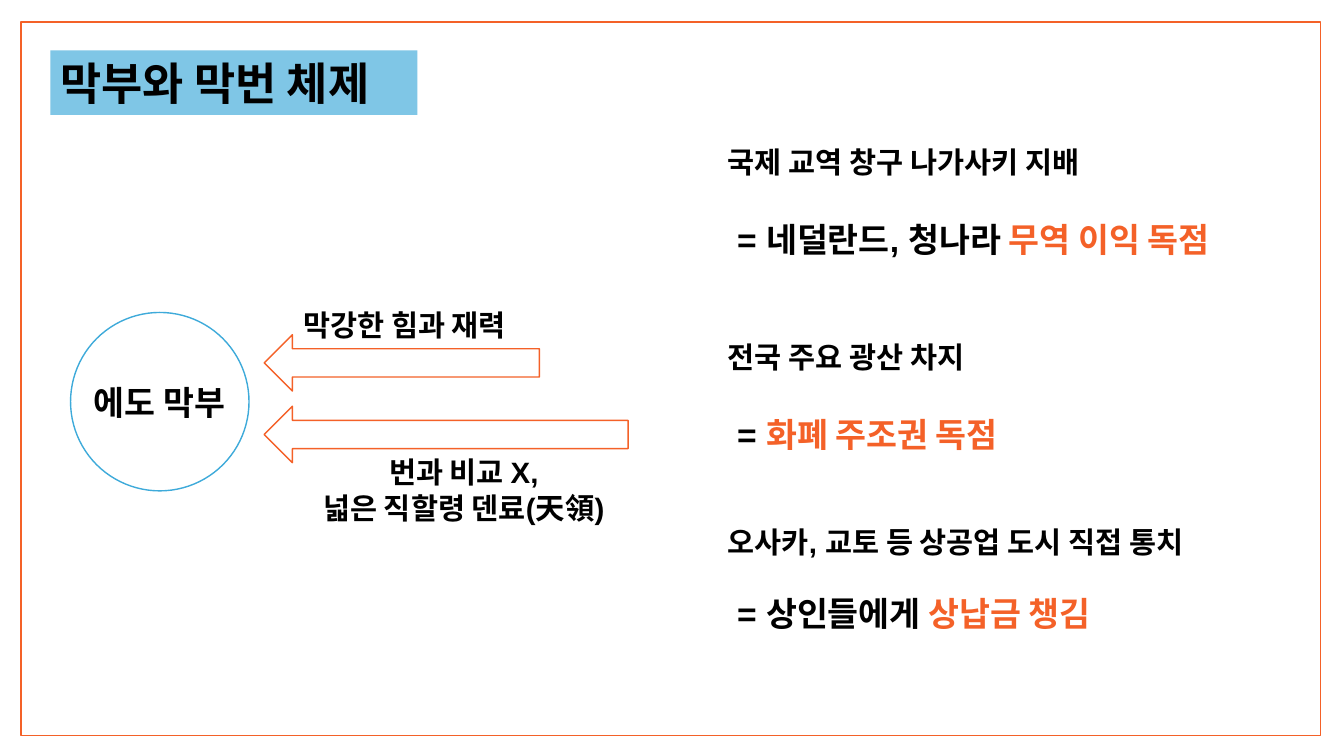
from pptx import Presentation
from pptx.dml.color import RGBColor
from pptx.enum.shapes import MSO_SHAPE
from pptx.enum.text import MSO_ANCHOR, PP_ALIGN
from pptx.util import Inches, Pt

RECTANGLE = MSO_SHAPE.RECTANGLE
OVAL = MSO_SHAPE.OVAL
ARROW = MSO_SHAPE.RIGHT_ARROW
LEFT, CENTER = PP_ALIGN.LEFT, PP_ALIGN.CENTER
TOP = MSO_ANCHOR.TOP

BLACK, WHITE = "000000", "FFFFFF"
ORANGE, BLUE, SKY = "F46128", "3EAADA", "7FC6E6"
LATIN_FONT, KOREAN_FONT = "Arial", "Noto Sans CJK KR"

ADVANTAGES = [
    # top, height, gap in points, heading, plain result, highlighted result
    (1.38, 1.26, 28, "국제 교역 창구 나가사키 지배", " = 네덜란드, 청나라 ", "무역 이익 독점"),
    (3.32, 1.26, 28, "전국 주요 광산 차지", " = ", "화폐 주조권 독점"),
    (5.15, 1.21, 24, "오사카, 교토 등 상공업 도시 직접 통치", " = 상인들에게", " 상납금 챙김"),
]


def rgb(hex_color):
    return RGBColor.from_string(hex_color)


def add_outline(slide, kind, box, fill=None, line=None, rotation=0):
    shape = slide.shapes.add_shape(kind, *map(Inches, box))
    shape.shadow.inherit = False
    shape.rotation = rotation
    if fill:
        shape.fill.solid()
        shape.fill.fore_color.rgb = rgb(fill)
    else:
        shape.fill.background()
    if line:
        shape.line.color.rgb = rgb(line)
        shape.line.width = Pt(1)
    else:
        shape.line.fill.background()
    return shape


def write(frame, paragraphs, align=LEFT, font=LATIN_FONT, gap=0):
    """Fill a frame; each paragraph is a list of (text, size, colour) runs."""
    frame.word_wrap = True
    frame.vertical_anchor = TOP
    for index, runs in enumerate(paragraphs):
        paragraph = frame.add_paragraph() if index else frame.paragraphs[0]
        paragraph.alignment = align
        if index:
            paragraph.space_before = Pt(gap)
        for text, size, color in runs:
            run = paragraph.add_run()
            run.text = text
            run.font.color.rgb = rgb(color)
            for attribute, value in {"name": font, "size": Pt(size), "bold": True}.items():
                setattr(run.font, attribute, value)


def add_label(slide, box, paragraphs, **style):
    label = slide.shapes.add_textbox(*map(Inches, box))
    write(label.text_frame, paragraphs, **style)


def add_arrow(slide, top, width):
    add_outline(slide, ARROW, (2.62, top, width, 0.56), WHITE, ORANGE, rotation=180)


def main():
    deck = Presentation()
    deck.slide_width, deck.slide_height = Inches(13.33), Inches(7.5)
    slide = deck.slides.add_slide(deck.slide_layouts[6])

    add_outline(slide, RECTANGLE, (0.21, 0.22, 12.89, 7.08), line=ORANGE)
    title = add_outline(slide, RECTANGLE, (0.5, 0.5, 3.64, 0.64), SKY)
    write(title.text_frame, [[("막부와 막번 체제", 32, BLACK)]])

    add_outline(slide, OVAL, (0.7, 3.1, 1.77, 1.77), WHITE, BLUE)
    add_label(slide, (0.74, 3.74, 1.68, 0.5), [[("에도 막부", 24, BLACK)]], align=CENTER)

    add_arrow(slide, 3.32, 2.73)
    add_label(slide, (2.91, 3, 2.88, 0.45), [[("막강한 힘과 재력", 21, BLACK)]],
              font=KOREAN_FONT)
    add_arrow(slide, 4.03, 3.61)
    add_label(slide, (2.91, 4.46, 3.38, 0.81),
              [[("번과 비교 X,", 21, BLACK)], [("넓은 직할령 덴료(天領)", 21, BLACK)]],
              align=CENTER)

    for top, height, gap, heading, result, highlight in ADVANTAGES:
        add_label(slide, (7.12, top, 5.62, height),
                  [[(heading, 21, BLACK)],
                   [(result, 24, BLACK), (highlight, 24, ORANGE)]],
                  gap=gap)

    deck.save("out.pptx")


if __name__ == "__main__":
    main()
